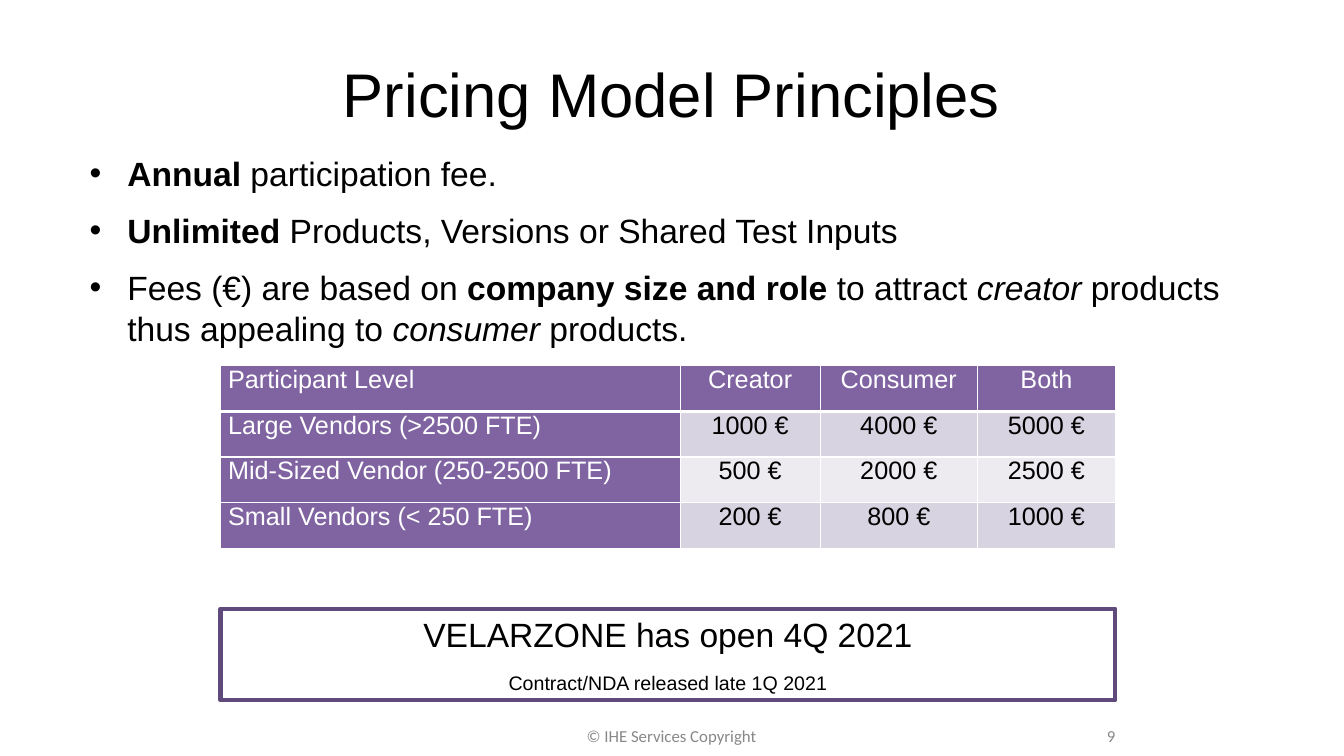
from lxml import etree
from pptx import Presentation
from pptx import util as u
from pptx.dml.color import RGBColor
from pptx.enum import shapes, text
from pptx.oxml import ns

BLACK = RGBColor(0x00, 0x00, 0x00)
WHITE = RGBColor(0xFF, 0xFF, 0xFF)
GREY = RGBColor(0x88, 0x88, 0x88)
PURPLE = RGBColor(0x80, 0x64, 0xA2)
DARK_PURPLE = RGBColor(0x60, 0x4A, 0x7B)
BANDS = (RGBColor(0xD8, 0xD3, 0xE0), RGBColor(0xED, 0xEA, 0xF0))

LEFT, CENTER, RIGHT = text.PP_ALIGN.LEFT, text.PP_ALIGN.CENTER, text.PP_ALIGN.RIGHT
TOP, MIDDLE = text.MSO_ANCHOR.TOP, text.MSO_ANCHOR.MIDDLE

# Runs are (words, style), style being "", "b" or "i"
TITLE = "Pricing Model Principles"
PRINCIPLES = [
    [("Annual", "b"), (" participation fee.", "")],
    [("Unlimited", "b"), (" Products, Versions or Shared Test Inputs", "")],
    [("Fees (€) are based on ", ""), ("company size and role ", "b"),
     ("to attract ", ""), ("creator", "i"), (" products thus appealing to ", ""),
     ("consumer", "i"), (" products.", "")],
]
FEES = [
    ("Participant Level", "Creator", "Consumer", "Both"),
    ("Large Vendors (>2500 FTE)", "1000 €", "4000 €", "5000 €"),
    ("Mid-Sized Vendor (250-2500 FTE)", "500 €", "2000 €", "2500 €"),
    ("Small Vendors (< 250 FTE)", "200 €", "800 €", "1000 €"),
]
FEE_WIDTHS = (11.58, 3.53, 3.96, 3.48)
FEE_ROW_HEIGHT = 1.15
LAUNCH = [("VELARZONE has open 4Q 2021", 24), ("Contract/NDA released late 1Q 2021", 14)]
COPYRIGHT = "© IHE Services Copyright"
PAGE = "9"

PANEL_LEFT, PANEL_WIDTH = 5.56, 22.55
FOOTER_TOP, FOOTER_HEIGHT = 18.03, 1.02


def add_run(paragraph, words, size, color=BLACK, font="Arial", style=""):
    run = paragraph.add_run()
    run.text = words
    run.font.name = font
    run.font.size = u.Pt(size)
    run.font.color.rgb = color
    run.font.bold = style == "b"
    run.font.italic = style == "i"


def paragraphs(frame, count, gap=0):
    """Yield count paragraphs with gap points between neighbours."""
    for index in range(count):
        paragraph = frame.add_paragraph() if index else frame.paragraphs[0]
        paragraph.space_before = u.Pt(gap if index else 0)
        paragraph.space_after = u.Pt(gap)
        yield paragraph


def add_box(slide, left, top, width, height, anchor=MIDDLE):
    box = slide.shapes.add_textbox(u.Cm(left), u.Cm(top), u.Cm(width), u.Cm(height))
    box.text_frame.word_wrap = True
    box.text_frame.vertical_anchor = anchor
    return box.text_frame


def add_line(slide, place, words, size, align, color=BLACK, font="Arial"):
    paragraph = add_box(slide, *place).paragraphs[0]
    paragraph.alignment = align
    add_run(paragraph, words, size, color, font)


def add_bullet(paragraph):
    properties = paragraph._p.get_or_add_pPr()
    properties.set("marL", str(u.Cm(1.27)))
    properties.set("indent", str(u.Cm(-0.95)))
    font = etree.SubElement(properties, ns.qn("a:buFont"))
    font.set("typeface", "Arial")
    etree.SubElement(properties, ns.qn("a:buChar")).set("char", "•")


def border_cell(cell, bottom):
    """Draw white borders, the lower one bottom points wide."""
    properties = cell._tc.get_or_add_tcPr()
    for index, (side, points) in enumerate(
            (("lnL", 1), ("lnR", 1), ("lnT", 1), ("lnB", bottom))):
        line = etree.Element(ns.qn("a:" + side), w=str(u.Pt(points)))
        fill = etree.SubElement(line, ns.qn("a:solidFill"))
        etree.SubElement(fill, ns.qn("a:srgbClr")).set("val", str(WHITE))
        properties.insert(index, line)


def add_fees(slide):
    table = slide.shapes.add_table(
        len(FEES), len(FEE_WIDTHS), u.Cm(PANEL_LEFT), u.Cm(9.22),
        u.Cm(PANEL_WIDTH), u.Cm(FEE_ROW_HEIGHT * len(FEES))).table
    for column, width in zip(table.columns, FEE_WIDTHS):
        column.width = u.Cm(width)
    for r, fee_row in enumerate(FEES):
        table.rows[r].height = u.Cm(FEE_ROW_HEIGHT)
        for c, words in enumerate(fee_row):
            cell = table.cell(r, c)
            heading = r == 0 or c == 0
            cell.margin_left = cell.margin_right = u.Cm(0.19)
            cell.margin_top = cell.margin_bottom = 0
            cell.fill.solid()
            cell.fill.fore_color.rgb = PURPLE if heading else BANDS[(r - 1) % 2]
            border_cell(cell, bottom=1 if r else 3)
            paragraph = cell.text_frame.paragraphs[0]
            paragraph.alignment = CENTER if c else LEFT
            add_run(paragraph, words, 18, WHITE if heading else BLACK)


def add_launch(slide):
    panel = slide.shapes.add_shape(
        shapes.MSO_SHAPE.RECTANGLE, u.Cm(PANEL_LEFT), u.Cm(15.34),
        u.Cm(PANEL_WIDTH), u.Cm(2.31))
    panel.shadow.inherit = False
    panel.fill.background()
    panel.line.color.rgb = DARK_PURPLE
    panel.line.width = u.Pt(3)
    frame = panel.text_frame
    frame.word_wrap = True
    frame.vertical_anchor = TOP
    for paragraph, (words, size) in zip(paragraphs(frame, len(LAUNCH), 6), LAUNCH):
        paragraph.alignment = CENTER
        add_run(paragraph, words, size)


def main():
    deck = Presentation()
    deck.slide_width, deck.slide_height = u.Cm(33.87), u.Cm(19.05)
    slide = deck.slides.add_slide(deck.slide_layouts[6])

    add_line(slide, (1.69, 0.76, 30.48, 3.18), TITLE, 44, CENTER)
    body = add_box(slide, 1.69, 3.73, 30.23, 11.13, TOP)
    for paragraph, runs in zip(paragraphs(body, len(PRINCIPLES), 6), PRINCIPLES):
        add_bullet(paragraph)
        for words, style in runs:
            add_run(paragraph, words, 24, style=style)
    add_fees(slide)
    add_launch(slide)
    add_line(slide, (12.9, FOOTER_TOP, 8.05, FOOTER_HEIGHT), COPYRIGHT, 12, CENTER, GREY, "Calibri")
    add_line(slide, (22.43, FOOTER_TOP, 5.93, FOOTER_HEIGHT), PAGE, 12, RIGHT, GREY, "Calibri")
    deck.save("out.pptx")


if __name__ == "__main__":
    main()
